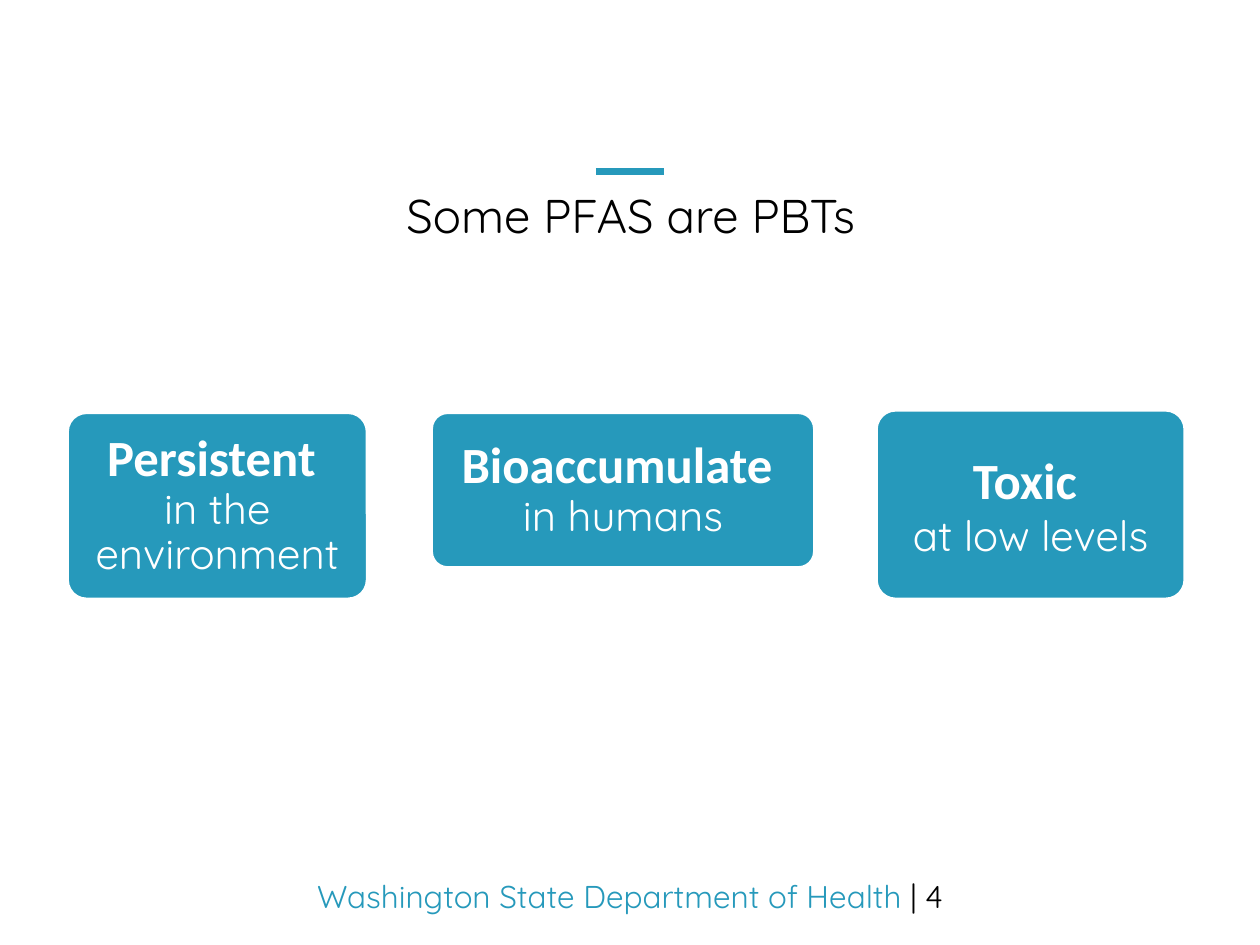
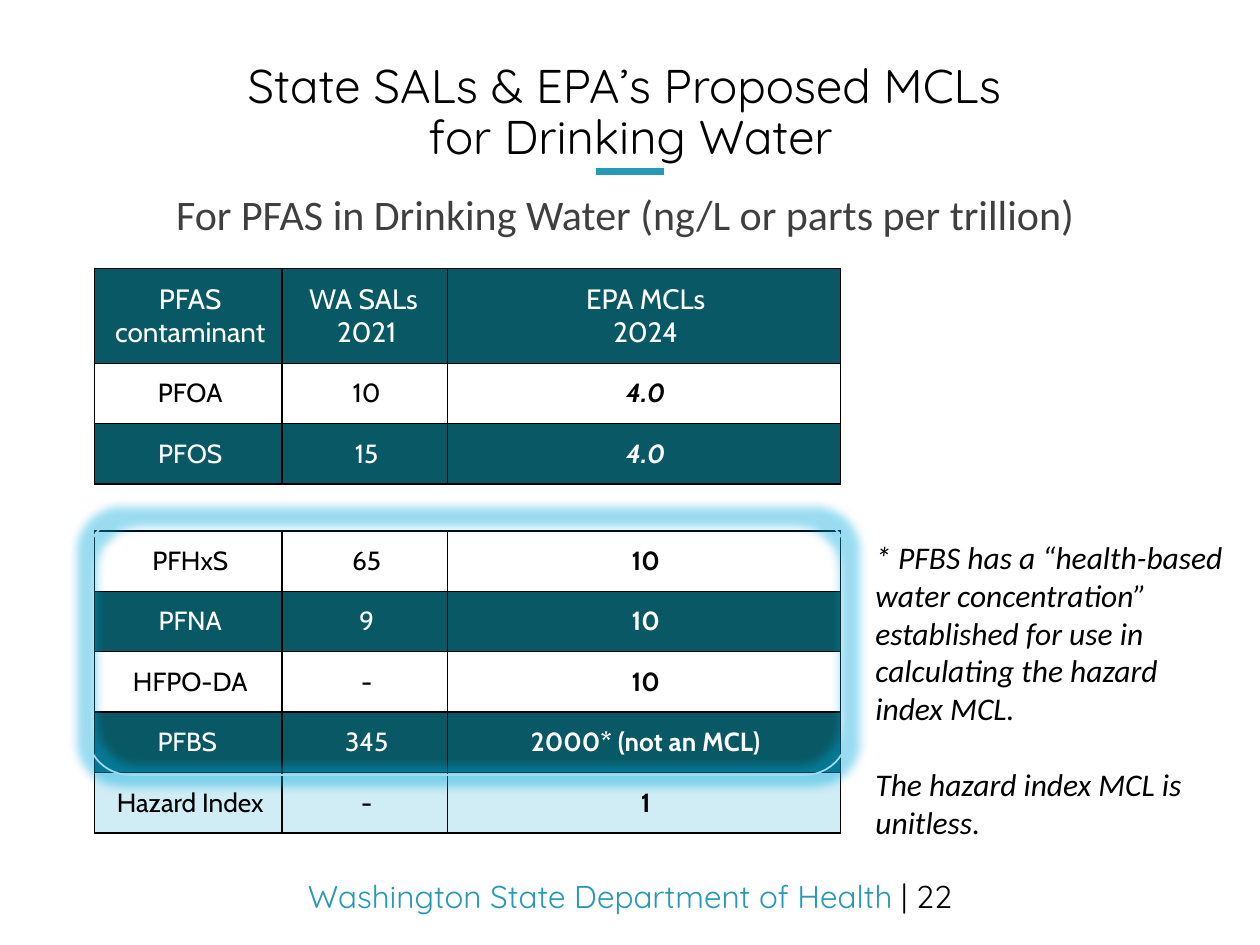
import pptx
import pptx.util
import pptx.dml.color
import pptx.enum.shapes
import pptx.enum.text
import pptx.oxml
import pptx.oxml.ns
from lxml import etree

Inches = pptx.util.Inches
Pt = pptx.util.Pt
RGBColor = pptx.dml.color.RGBColor
Align = pptx.enum.text.PP_ALIGN
Anchor = pptx.enum.text.MSO_ANCHOR
Fit = pptx.enum.text.MSO_AUTO_SIZE
Kind = pptx.enum.shapes.MSO_SHAPE
qn = pptx.oxml.ns.qn

BLUE = RGBColor(0x26, 0x99, 0xBB)
PALE = RGBColor(0xA0, 0xDB, 0xEC)
GLOW = RGBColor(0x00, 0xA9, 0xE0)
TEAL = RGBColor(0x08, 0x59, 0x65)
ICE = RGBColor(0xD0, 0xED, 0xF5)
GREY = RGBColor(0x3F, 0x3F, 0x3F)
BLACK = RGBColor(0, 0, 0)
WHITE = RGBColor(255, 255, 255)

HEAD_FONT = "Quicksand"
TEXT_FONT = "Calibri"
CELL_FONT = "Cabin"
NO_STYLE = "{2D5ABB26-0587-4C30-8999-92F81FD0307C}"


def style(run, name, size, color, bold=False, slant=False):
    font = run.font
    font.name = name
    font.size = Pt(size)
    font.color.rgb = color
    font.bold = bold
    font.italic = slant


def place(shape, left, top, width, height):
    shape.left, shape.top = Inches(left), Inches(top)
    shape.width, shape.height = Inches(width), Inches(height)


def add_text(slide, left, top, width, height):
    box = slide.shapes.add_textbox(
        Inches(left), Inches(top), Inches(width), Inches(height))
    frame = box.text_frame
    frame.word_wrap = True
    frame.auto_size = Fit.SHAPE_TO_FIT_TEXT
    return frame


def add_dash(slide):
    dash = slide.shapes.add_connector(
        pptx.enum.shapes.MSO_CONNECTOR.STRAIGHT,
        Inches(4.73), Inches(1.36), Inches(5.27), Inches(1.36))
    dash.line.color.rgb = BLUE
    dash.line.width = Pt(4)
    etree.SubElement(dash._element.spPr, qn("a:effectLst"))


def add_foot(slide, number):
    para = add_text(slide, 0, 6.91, 10, 0.4).paragraphs[0]
    para.alignment = Align.CENTER
    parts = (("Washington State Department of Health ", BLUE),
             (f"| {number}", BLACK))
    for text, color in parts:
        run = para.add_run()
        run.text = text
        style(run, HEAD_FONT, 18, color)


def fill_holder(shape, text, name, size, color):
    frame = shape.text_frame
    frame.word_wrap = True
    frame.auto_size = Fit.NONE
    para = frame.paragraphs[0]
    para.text = text
    para.alignment = Align.CENTER
    para.line_spacing = 0.9
    para.space_before = Pt(0)
    for run in para.runs:
        style(run, name, size, color)
    return para


def add_page(deck, layout, title, top, height, number):
    slide = deck.slides.add_slide(deck.slide_layouts[layout])
    add_dash(slide)
    add_foot(slide, number)
    head = slide.shapes.title
    place(head, 0.01, top, 9.99, height)
    fill_holder(head, title, HEAD_FONT, 27, BLACK)
    head.text_frame.vertical_anchor = Anchor.MIDDLE
    return slide


def add_round(slide, left, top, width, height, edge):
    shape = slide.shapes.add_shape(
        Kind.ROUNDED_RECTANGLE,
        Inches(left), Inches(top), Inches(width), Inches(height))
    shape.shadow.inherit = False
    shape.line.color.rgb = edge
    shape.line.width = Pt(1)
    return shape


def add_trait(slide, text, spacing, *area):
    card = add_round(slide, *area, WHITE)
    card.adjustments[0] = 0.1
    card.fill.solid()
    card.fill.fore_color.rgb = BLUE
    frame = card.text_frame
    frame.word_wrap = True
    frame.vertical_anchor = Anchor.MIDDLE
    frame.margin_left = frame.margin_right = Inches(0.06)
    frame.margin_top = frame.margin_bottom = Inches(0.04)
    frame.text = text
    for para in frame.paragraphs:
        para.alignment = Align.CENTER
        para.line_spacing = spacing
    name, note = [run for para in frame.paragraphs for run in para.runs]
    style(name, TEXT_FONT, 29, WHITE, bold=True)
    style(note, HEAD_FONT, 24, WHITE)


def add_glow(slide):
    ring = add_round(slide, 0.69, 4.1, 6.04, 2.05, PALE)
    ring.fill.background()
    effects = ring._element.spPr.find(qn("a:effectLst"))
    glow = etree.SubElement(effects, qn("a:glow"), rad=str(Pt(11)))
    color = etree.SubElement(glow, qn("a:srgbClr"), val=str(GLOW))
    etree.SubElement(color, qn("a:alpha"), val="40000")


def set_sides(cell, sides):
    props = cell._tc.get_or_add_tcPr()
    for side in sides:
        line = etree.SubElement(props, qn(f"a:ln{side}"), w=str(Pt(1)))
        fill = etree.SubElement(line, qn("a:solidFill"))
        etree.SubElement(fill, qn("a:srgbClr"), val=str(BLACK))


def set_cell(cell, text, size, ink, paint, sides, bold, slant):
    set_sides(cell, sides)
    cell.fill.solid()
    cell.fill.fore_color.rgb = paint
    cell.vertical_anchor = Anchor.MIDDLE
    cell.margin_left = Inches(0.14 if text else 0)
    pad = Inches(0.11 if text else 0)
    cell.margin_right = cell.margin_top = cell.margin_bottom = pad
    cell.text_frame.text = text
    for para in cell.text_frame.paragraphs:
        para.alignment = Align.CENTER
        for run in para.runs:
            style(run, CELL_FONT, size, ink, bold, slant)


def add_limits(slide):
    rows = (
        (("PFAS contaminant", "WA SALs \n2021", "EPA MCLs\n2024"), TEAL),
        (("PFOA", "10", "4.0"), WHITE),
        (("PFOS", "15", "4.0"), TEAL),
        (("", "", ""), WHITE),
        (("PFHxS", "65", "10"), WHITE),
        (("PFNA", "9", "10"), TEAL),
        (("HFPO-DA", "-", "10"), WHITE),
        (("PFBS ", "345", "2000* (not an MCL)"), TEAL),
        (("Hazard Index", "-", "1"), ICE),
    )
    widths = (1.49, 1.31, 3.12)
    heights = {0: 0.75, 3: 0.37}
    edges = {2: "LRT", 3: ""}
    table = slide.shapes.add_table(
        len(rows), len(widths),
        Inches(0.75), Inches(2.13), Inches(5.92), Inches(4.47)).table
    table.first_row = table.horz_banding = False
    table._tbl.tblPr.find(qn("a:tableStyleId")).text = NO_STYLE
    for col, width in zip(table.columns, widths):
        col.width = Inches(width)
    for i, (texts, paint) in enumerate(rows):
        table.rows[i].height = Inches(heights.get(i, 0.48))
        ink = WHITE if paint == TEAL else BLACK
        size = 15 if i else 16
        for j, text in enumerate(texts):
            strong = i > 0 and j == 2
            set_cell(table.cell(i, j), text, size, ink, paint,
                     edges.get(i, "LRTB"), strong, strong and i < 3)


def add_lead(slide, text):
    body = slide.placeholders[1]
    place(body, 0.87, 1.49, 8.26, 0.53)
    para = fill_holder(body, text, TEXT_FONT, 24, GREY)
    props = para._p.get_or_add_pPr()
    props.set("marL", "0")
    props.set("indent", "0")
    etree.SubElement(props, qn("a:buNone"))


def add_notes(slide):
    frame = add_text(slide, 6.85, 4.22, 3, 2.52)
    frame.text = (
        "* PFBS has a “health-based water concentration” established "
        "for use in calculating the hazard index MCL.\n"
        "The hazard index MCL is unitless.")
    for para in frame.paragraphs:
        style(para.runs[0], TEXT_FONT, 18, BLACK, slant=True)
    frame.paragraphs[0].space_after = Pt(22)


def main():
    deck = pptx.Presentation()
    deck.slide_width, deck.slide_height = Inches(10), Inches(7.5)

    slide = add_page(deck, 5, "Some PFAS are PBTs", 1.53, 0.4, 4)
    add_trait(slide, "Persistent \vin the environment", 0.9,
              0.54, 3.28, 2.37, 1.47)
    add_trait(slide, "Bioaccumulate \vin humans", 0.9,
              3.43, 3.28, 3.03, 1.22)
    add_trait(slide, "Toxic \nat low levels", 1.0,
              6.96, 3.26, 2.44, 1.49)

    slide = add_page(
        deck, 1, "State SALs & EPA’s Proposed MCLs \nfor Drinking Water",
        0.64, 0.53, 22)
    add_lead(slide, "For PFAS in Drinking Water (ng/L or parts per trillion) ")
    add_limits(slide)
    add_glow(slide)
    add_notes(slide)

    deck.save("out.pptx")


if __name__ == "__main__":
    main()
